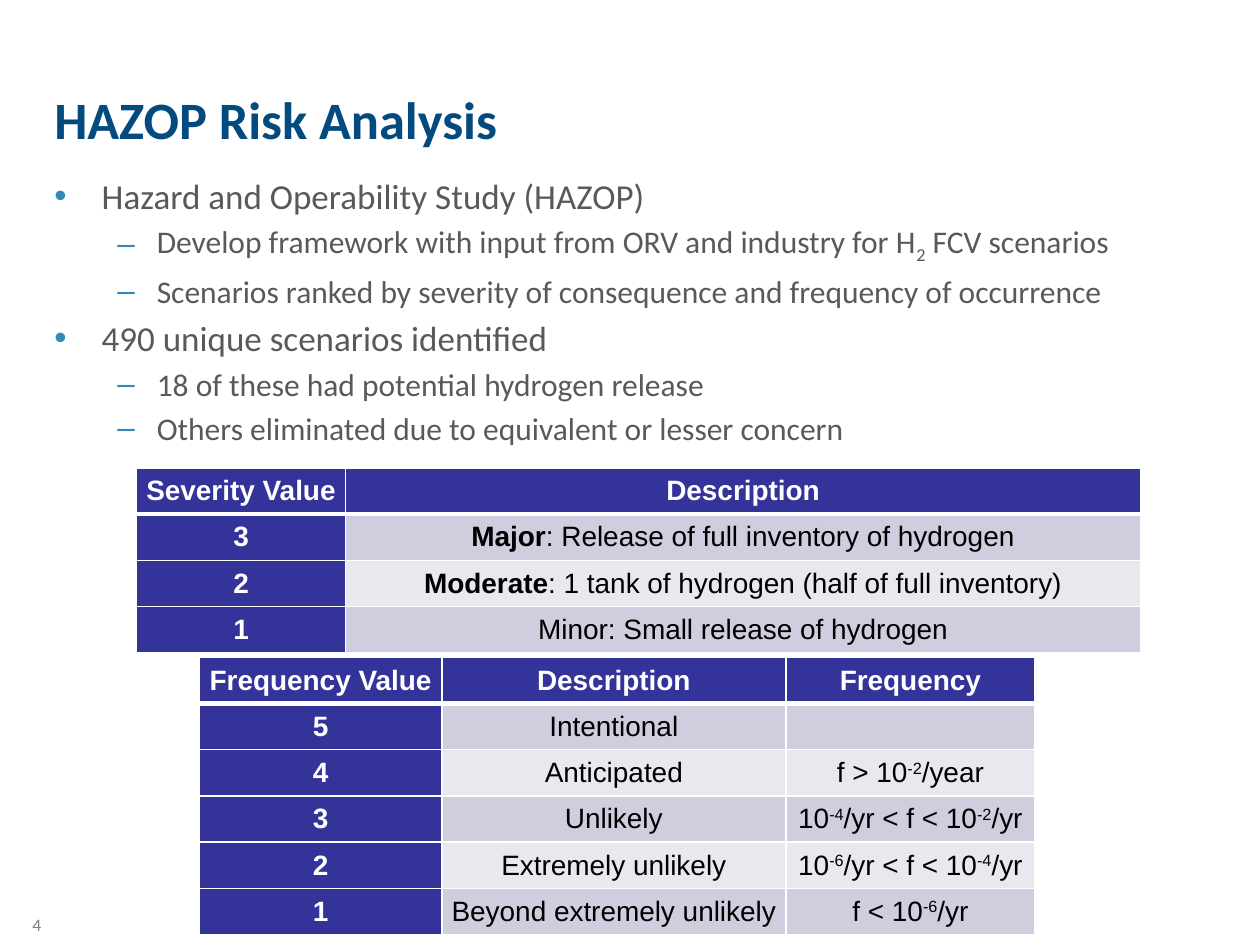
"""Build the HAZOP risk analysis slide with its severity and frequency tables."""
from lxml import etree
from pptx import Presentation
from pptx.dml.color import RGBColor
from pptx.enum import text as txt
from pptx.oxml import ns
from pptx.util import Pt

hexcolor = RGBColor.from_string


def write(paragraph, content, size=16, color="000000", bold=False, face="Arial", shift=0):
    """Append runs to a paragraph; parts between bars are raised or lowered by shift percent."""
    for index, part in enumerate(content.split("|")):
        if not part:
            continue
        run = paragraph.add_run()
        run.text = part
        run.font.size = Pt(size)
        run.font.name = face
        run.font.bold = bold
        run.font.color.rgb = hexcolor(color)
        if index % 2:
            run.font._element.set("baseline", str(shift * 1000))


def add_frame(left, top, width, height):
    """Add a wrapping text box and return its text frame."""
    frame = slide.shapes.add_textbox(Pt(left), Pt(top), Pt(width), Pt(height)).text_frame
    frame.word_wrap = True
    return frame


deck = Presentation()
deck.slide_width, deck.slide_height = Pt(720), Pt(540)
slide = deck.slides.add_slide(deck.slide_layouts[6])

heading = add_frame(24, 46, 672, 62)
write(heading.paragraphs[0], "HAZOP Risk Analysis", size=30, color="034B7F", bold=True, face="Calibri")

outline = [
    (0, "Hazard and Operability Study (HAZOP)"),
    (1, "Develop framework with input from ORV and industry for H|2| FCV scenarios"),
    (1, "Scenarios ranked by severity of consequence and frequency of occurrence"),
    (0, "490 unique scenarios identified"),
    (1, "18 of these had potential hydrogen release"),
    (1, "Others eliminated due to equivalent or lesser concern"),
]
levels = [
    {"size": 20, "margin": 27, "hanging": 27, "bullet": "•"},
    {"size": 18, "margin": 58.5, "hanging": 22.5, "bullet": "–"},
]
points = add_frame(24, 96, 672, 174)
for number, (depth, sentence) in enumerate(outline):
    level = levels[depth]
    point = points.add_paragraph() if number else points.paragraphs[0]
    point.level = depth
    if number:
        point.space_before = Pt(level["size"] * 0.2)
    props = point._p.get_or_add_pPr()
    props.set("marL", str(Pt(level["margin"])))
    props.set("indent", str(-Pt(level["hanging"])))
    bullet_color = etree.SubElement(props, ns.qn("a:buClr"))
    etree.SubElement(bullet_color, ns.qn("a:srgbClr"), val="328BB6")
    etree.SubElement(props, ns.qn("a:buFont"), typeface="Arial")
    etree.SubElement(props, ns.qn("a:buChar"), char=level["bullet"])
    write(point, sentence, size=level["size"], color="595959", face="Calibri", shift=-25)

page = add_frame(0, 519, 42, 18)
page.vertical_anchor = txt.MSO_ANCHOR.MIDDLE
page.paragraphs[0].alignment = txt.PP_ALIGN.CENTER
write(page.paragraphs[0], "4", size=10, color="808080", face="Calibri")

severity = [
    ["Severity Value", "Description"],
    ["3", "Major**: Release of full inventory of hydrogen"],
    ["2", "Moderate**: 1 tank of hydrogen (half of full inventory)"],
    ["1", "Minor: Small release of hydrogen"],
]
frequency = [
    ["Frequency Value", "Description", "Frequency"],
    ["5", "Intentional", ""],
    ["4", "Anticipated", "f > 10|-2|/year"],
    ["3", "Unlikely", "10|-4|/yr < f < 10|-2|/yr"],
    ["2", "Extremely unlikely", "10|-6|/yr < f < 10|-4|/yr"],
    ["1", "Beyond extremely unlikely", "f < 10|-6|/yr"],
]
row_height = 26.4
for left, top, widths, rows in [
    (78, 267.4, [119.5, 454.3], severity),
    (114, 375.6, [138.5, 196.6, 142.3], frequency),
]:
    grid = slide.shapes.add_table(
        len(rows), len(widths), Pt(left), Pt(top), Pt(sum(widths)), Pt(row_height * len(rows))
    ).table
    for column, width in zip(grid.columns, widths):
        column.width = Pt(width)
    for r, row in enumerate(rows):
        grid.rows[r].height = Pt(row_height)
        for c, entry in enumerate(row):
            cell = grid.cell(r, c)
            is_label = r == 0 or c == 0
            cell.margin_left = cell.margin_right = Pt(3.6)
            cell.margin_top = cell.margin_bottom = Pt(3.6)
            cell.vertical_anchor = txt.MSO_ANCHOR.MIDDLE
            for side in "LRTB":
                thick = (r, side) in [(0, "B"), (1, "T")]
                border = etree.SubElement(
                    cell._tc.get_or_add_tcPr(), ns.qn(f"a:ln{side}"), w=str(Pt(3 if thick else 1))
                )
                paint = etree.SubElement(border, ns.qn("a:solidFill"))
                etree.SubElement(paint, ns.qn("a:srgbClr"), val="FFFFFF")
            cell.fill.solid()
            cell.fill.fore_color.rgb = hexcolor("333399" if is_label else "CECEDE" if r % 2 else "E8E8EF")
            line = cell.text_frame.paragraphs[0]
            line.alignment = txt.PP_ALIGN.CENTER
            lead, _, rest = entry.rpartition("**")
            write(line, lead, bold=True)
            write(line, rest, color="FFFFFF" if is_label else "000000", bold=is_label, shift=30)
            etree.SubElement(line._p, ns.qn("a:endParaRPr"), sz="1600")

deck.save("out.pptx")
